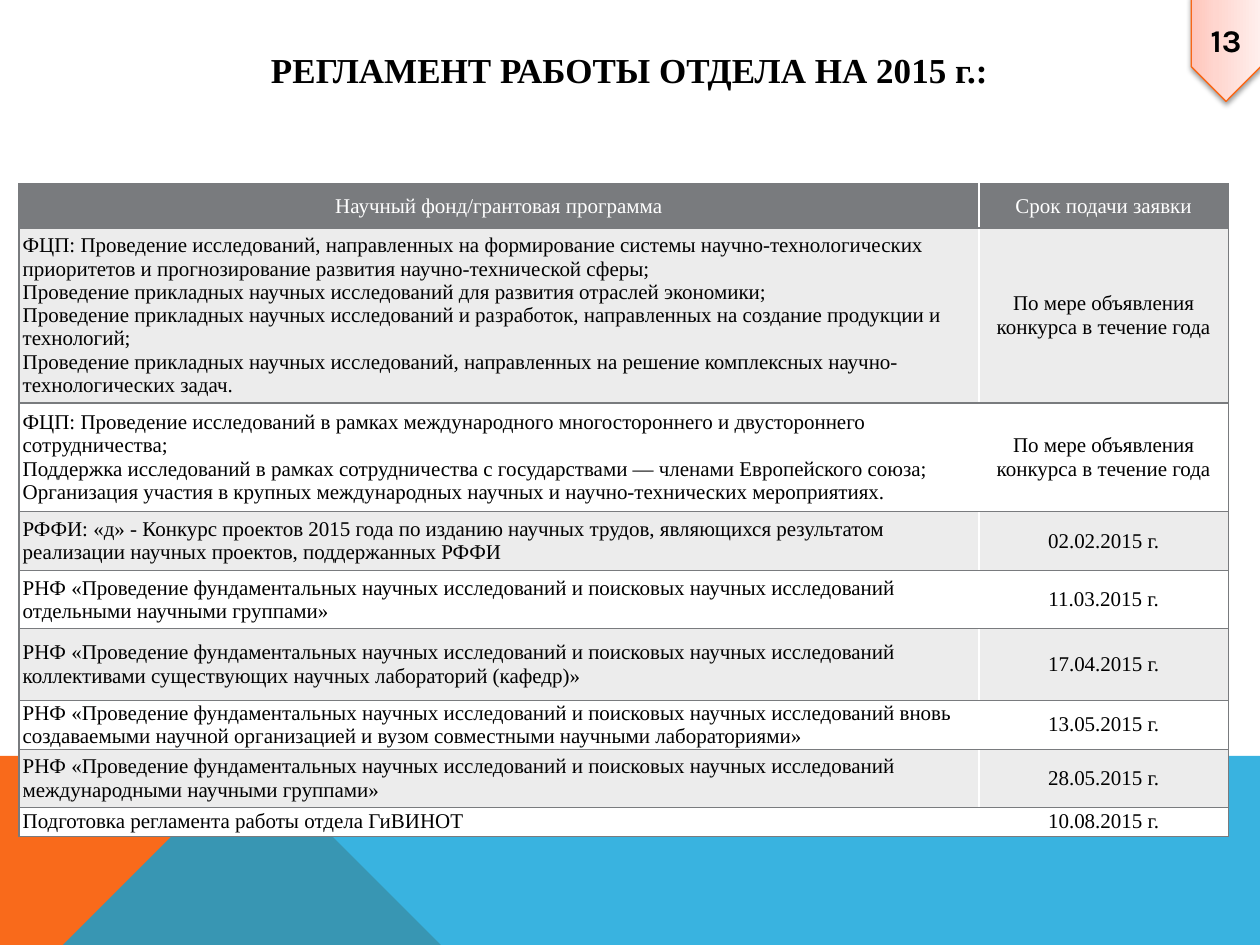
from lxml import etree
from pptx import Presentation
from pptx import util as u
from pptx.dml.color import RGBColor
from pptx.enum import shapes, text
from pptx.oxml import ns

W, H = 10, 7.5
FONT = "Times New Roman"
GREY, PALE, WHITE, BLACK = "797B7E", "ECECEC", "FFFFFF", "000000"
COLS = [7.62, 1.98]
ROWS = [0.35, 1.39, 0.86, 0.47, 0.46, 0.57, 0.39, 0.46, 0.23]
OPEN = "По мере объявления конкурса в течение года"
RNF = "РНФ «Проведение фундаментальных научных исследований и поисковых научных исследований "
DATA = [
    (["Научный фонд/грантовая программа"], "Срок подачи заявки"),
    (["ФЦП: Проведение исследований, направленных на формирование системы "
      "научно-технологических приоритетов и прогнозирование развития "
      "научно-технической сферы;",
      "Проведение прикладных научных исследований для развития отраслей экономики;",
      "Проведение прикладных научных исследований и разработок, направленных "
      "на создание продукции и технологий;",
      "Проведение прикладных научных исследований, направленных на решение "
      "комплексных научно-технологических задач."], OPEN),
    (["ФЦП: Проведение исследований в рамках международного многостороннего "
      "и двустороннего сотрудничества;",
      "Поддержка исследований в рамках сотрудничества с государствами — "
      "членами Европейского союза;",
      "Организация участия в крупных международных научных и "
      "научно-технических мероприятиях."], OPEN),
    (["РФФИ: «д» - Конкурс проектов 2015 года по изданию научных трудов, "
      "являющихся результатом реализации научных проектов, поддержанных РФФИ"],
     "02.02.2015 г."),
    ([RNF + "отдельными научными группами»"], "11.03.2015 г."),
    ([RNF + "коллективами существующих научных лабораторий (кафедр)»"],
     "17.04.2015 г."),
    ([RNF + "вновь создаваемыми научной организацией и вузом совместными "
      "научными лабораториями»"], "13.05.2015 г."),
    ([RNF + "международными научными группами»"], "28.05.2015 г."),
    (["Подготовка регламента работы отдела ГиВИНОТ"], "10.08.2015 г."),
]


def rgb(code):
    return RGBColor.from_string(code)


def box(*dims):
    return [u.Inches(d) for d in dims]


def node(root, tag, **attrs):
    return etree.SubElement(root, ns.qn("a:" + tag), attrs)


def tint(root, code, alpha=None):
    clr = node(root, "srgbClr", val=code)
    if alpha:
        node(clr, "alpha", val=str(alpha * 1000))


def write(frame, lines, size, color=BLACK, font=FONT, bold=False, mid=True):
    for i, line in enumerate(lines):
        para = frame.paragraphs[0] if i == 0 else frame.add_paragraph()
        para.alignment = text.PP_ALIGN.CENTER if mid else text.PP_ALIGN.LEFT
        run = para.add_run()
        run.text = line
        run.font.size, run.font.name, run.font.bold = u.Pt(size), font, bold
        run.font.color.rgb = rgb(color)


def poly(slide, pts, color, alpha=None):
    form = slide.shapes.build_freeform(*pts[0], scale=u.Inches(1))
    form.add_line_segments(pts[1:], close=True)
    shape = form.convert_to_shape()
    shape.shadow.inherit = False
    shape.line.fill.background()
    shape.fill.solid()
    shape.fill.fore_color.rgb = rgb(color)
    if alpha:
        clr = shape.fill._xPr.find(ns.qn("a:solidFill"))[0]
        node(clr, "alpha", val=str(alpha * 1000))


def head(slide, words):
    title = slide.shapes.title
    title.left, title.top, title.width, title.height = box(0.27, 0.28, 9.45, 0.55)
    title.text_frame.vertical_anchor = text.MSO_ANCHOR.MIDDLE
    write(title.text_frame, [words], 20, bold=True)


def edge(cell, sides):
    # Borders must come before the cell's fill
    props = cell._tc.get_or_add_tcPr()
    for side in sides:
        line = node(props, "ln" + side, w=str(u.Pt(1)))
        tint(node(line, "solidFill"), GREY)


def grid(slide):
    frame = slide.shapes.add_table(
        len(ROWS), len(COLS), *box(0.15, 1.46, sum(COLS), sum(ROWS)))
    table = frame.table
    for col, wide in zip(table.columns, COLS):
        col.width = u.Inches(wide)
    for r, (tall, (lines, date)) in enumerate(zip(ROWS, DATA)):
        table.rows[r].height = u.Inches(tall)
        back = GREY if r == 0 else PALE if r % 2 else WHITE
        for c, words in enumerate([lines, [date]]):
            cell = table.cell(r, c)
            edge(cell, "RTB" if c else "LTB")
            cell.fill.solid()
            cell.fill.fore_color.rgb = rgb(back)
            cell.margin_left = cell.margin_right = u.Inches(0.03)
            cell.margin_top = cell.margin_bottom = 0
            cell.vertical_anchor = text.MSO_ANCHOR.MIDDLE
            write(cell.text_frame, words, 12, BLACK if r else WHITE,
                  mid=c == 1 or r == 0)


def badge(slide, num):
    tag = slide.shapes.add_shape(
        shapes.MSO_SHAPE.PENTAGON, *box(9.31, 0.11, 0.84, 0.55))
    tag.rotation = 90
    tag.line.color.rgb = rgb("F96615")
    tag.line.width = u.Pt(0.75)
    # Three-stop gradient
    tag.fill.gradient()
    grad = tag.fill._xPr.find(ns.qn("a:gradFill"))
    for old in list(grad):
        grad.remove(old)
    stops = node(grad, "gsLst")
    for pos, code in [(0, "FFC5BA"), (35, "FFD6CF"), (100, "FFEFED")]:
        tint(node(stops, "gs", pos=str(pos * 1000)), code)
    node(grad, "lin", ang=str(270 * 60000), scaled="0")
    # Soft shadow below
    tag.shadow.inherit = False
    glow = node(tag.fill._xPr.find(ns.qn("a:effectLst")), "outerShdw",
                blurRad=str(u.Pt(3.1)), dist=str(u.Pt(1.6)),
                dir=str(90 * 60000), rotWithShape="0")
    tint(glow, BLACK, 38)
    # Upright number
    frame = tag.text_frame
    frame.vertical_anchor = text.MSO_ANCHOR.MIDDLE
    frame._txBody.bodyPr.set("vert", "vert270")
    write(frame, [num], 18, font="Karla", bold=True)


def main():
    prs = Presentation()
    prs.slide_width, prs.slide_height = box(W, H)
    slide = prs.slides.add_slide(prs.slide_layouts[5])
    # Bottom bands
    top, bend = 5.52, 2.23
    poly(slide, [(0, H), (0, top), (bend, top), (3.91, H)], "F96A1B")
    poly(slide, [(0, H), (bend, top), (W, top), (W, H)], "08A1D9", 80)
    # Content
    head(slide, "РЕГЛАМЕНТ РАБОТЫ ОТДЕЛА НА 2015 г.:")
    grid(slide)
    badge(slide, "13")
    prs.save("out.pptx")


if __name__ == "__main__":
    main()
